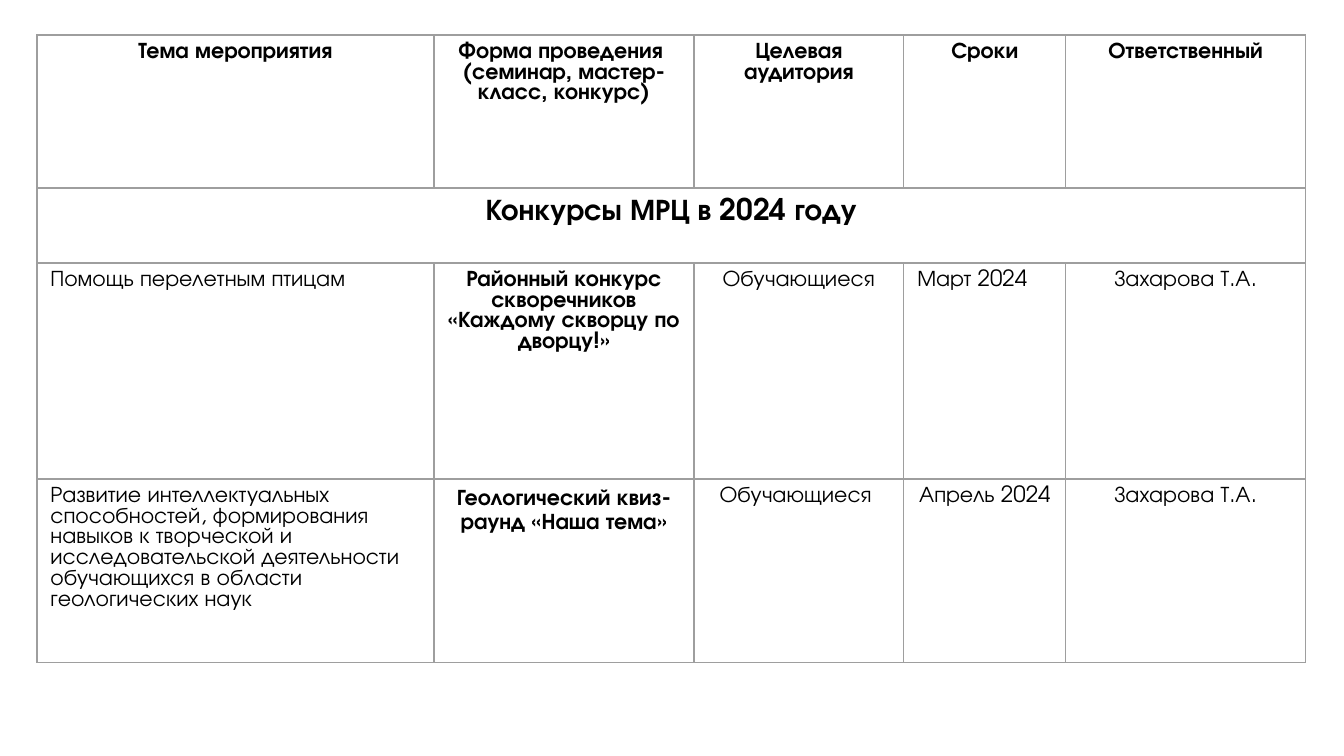
from dataclasses import dataclass

from lxml import etree
from pptx import Presentation
from pptx import util as u
from pptx.dml import color
from pptx.enum import text
from pptx.oxml import ns

EMU_PER_PX = 914400 / 134.4
COLORS = {"text": "000000", "border": "9E9E9E"}
FONT = "TeX Gyre Adventor"
BORDER_PT = 0.75
COLUMN_WIDTHS = [397, 260, 210, 162, 240]
ROW_HEIGHTS = [153, 75, 216, 184]
TABLE_LEFT, TABLE_TOP = 37, 35
CENTER, LEFT = text.PP_ALIGN.CENTER, text.PP_ALIGN.LEFT


@dataclass
class Entry:
    lines: str
    bold: bool = False
    size: int = 12
    align: text.PP_ALIGN = CENTER
    spacing: float = 1.0


HEADINGS = [
    "Тема мероприятия",
    "Форма проведения \n(семинар, мастер-класс, конкурс)",
    "Целевая аудитория",
    "Сроки",
    "Ответственный",
]
ROWS = [
    [Entry(heading, bold=True) for heading in HEADINGS],
    [Entry("Конкурсы МРЦ в 2024 году", bold=True, size=16, spacing=1.15)],
    [
        Entry("Помощь перелетным птицам", align=LEFT),
        Entry("Районный конкурс скворечников «Каждому скворцу по дворцу!»", bold=True),
        Entry("Обучающиеся"),
        Entry("Март 2024", align=LEFT),
        Entry("Захарова Т.А."),
    ],
    [
        Entry(
            "Развитие интеллектуальных способностей, формирования навыков "
            "к творческой и исследовательской деятельности обучающихся "
            "в области геологических наук",
            align=LEFT,
        ),
        Entry("Геологический квиз-раунд «Наша тема»", bold=True, spacing=1.15),
        Entry("Обучающиеся "),
        Entry("Апрель 2024"),
        Entry("Захарова Т.А."),
    ],
]


def px(length: int) -> u.Emu:
    return u.Emu(round(length * EMU_PER_PX))


def set_values(target, values: dict) -> None:
    for name, value in values.items():
        setattr(target, name, value)


def draw_borders(cell) -> None:
    properties = cell._tc.get_or_add_tcPr()
    for index, side in enumerate(("lnL", "lnR", "lnT", "lnB")):
        line = etree.Element(ns.qn(f"a:{side}"), w=str(u.Pt(BORDER_PT)))
        fill = etree.SubElement(line, ns.qn("a:solidFill"))
        etree.SubElement(fill, ns.qn("a:srgbClr"), val=COLORS["border"])
        properties.insert(index, line)


def write_entry(cell, entry: Entry) -> None:
    frame = cell.text_frame
    frame.text = entry.lines
    for para in frame.paragraphs:
        set_values(para, {"alignment": entry.align, "line_spacing": entry.spacing})
        for span in para.runs:
            set_values(
                span.font,
                {"name": FONT, "size": u.Pt(entry.size), "bold": entry.bold},
            )
            span.font.color.rgb = color.RGBColor.from_string(COLORS["text"])


def draw_table(page) -> None:
    table = page.shapes.add_table(
        len(ROW_HEIGHTS),
        len(COLUMN_WIDTHS),
        px(TABLE_LEFT),
        px(TABLE_TOP),
        px(sum(COLUMN_WIDTHS)),
        px(sum(ROW_HEIGHTS)),
    ).table
    set_values(table, {"first_row": False, "horz_banding": False})
    for column, width in zip(table.columns, COLUMN_WIDTHS):
        column.width = px(width)
    for row, height in zip(table.rows, ROW_HEIGHTS):
        row.height = px(height)
    for cell in table.iter_cells():
        cell.fill.background()
        draw_borders(cell)
    for row_index, entries in enumerate(ROWS):
        if len(entries) == 1:
            last = len(COLUMN_WIDTHS) - 1
            table.cell(row_index, 0).merge(table.cell(row_index, last))
        for column_index, entry in enumerate(entries):
            write_entry(table.cell(row_index, column_index), entry)


def main() -> None:
    deck = Presentation()
    set_values(deck, {"slide_width": px(1344), "slide_height": px(756)})
    page = deck.slides.add_slide(deck.slide_layouts[6])
    draw_table(page)
    deck.save("out.pptx")


if __name__ == "__main__":
    main()
